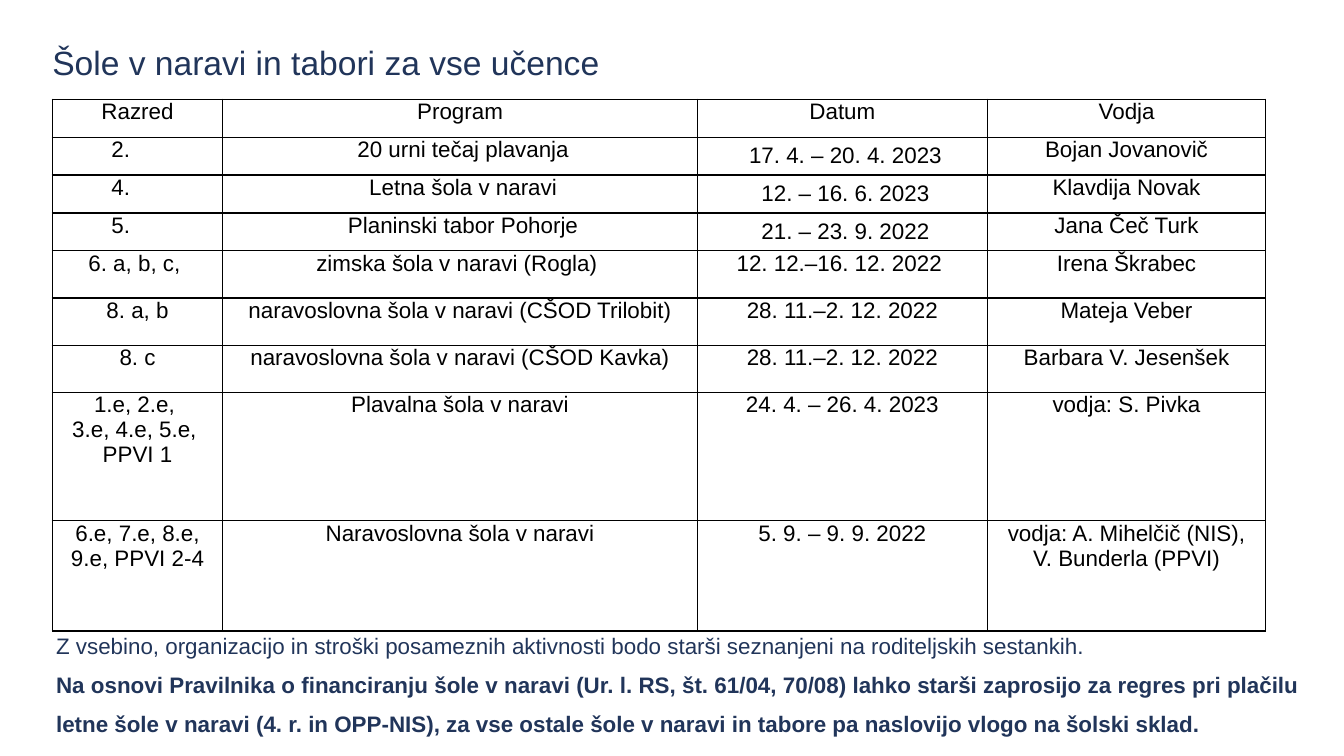
from dataclasses import dataclass
from lxml.etree import SubElement as Sub
from pptx import Presentation as Deck
from pptx.dml.color import RGBColor as Rgb
from pptx.enum.text import MSO_ANCHOR as Anchor, MSO_AUTO_SIZE as Fit, PP_ALIGN as Align
from pptx.oxml.ns import qn
from pptx.util import Pt


@dataclass(frozen=True)
class Theme:
    face: str = "Arial"
    navy: str = "21355A"
    black: str = "000000"
    head: float = 18
    text: float = 12
    rule: float = 0.75


theme = Theme()
TITLE = "Šole v naravi in tabori za vse učence"
NOTES = [
    "Z vsebino, organizacijo in stroški posameznih aktivnosti bodo starši "
    "seznanjeni na roditeljskih sestankih.",
    "Na osnovi Pravilnika o financiranju šole v naravi (Ur. l. RS, št. 61/04, 70/08) "
    "lahko starši zaprosijo za regres pri plačilu letne šole v naravi (4. r. in OPP-NIS), "
    "za vse ostale šole v naravi in tabore pa naslovijo vlogo na šolski sklad.",
]
COLS = [91.4, 254.2, 155.5, 149]
HIGH = [20.3] * 4 + [25.3] * 3 + [68.8, 59]
ROWS = [
    ("Razred", "Program", "Datum", "Vodja"),
    ("2.", " 20 urni tečaj plavanja", " 17. 4. – 20. 4. 2023", "Bojan Jovanovič"),
    ("4.", " Letna šola v naravi", " 12. – 16. 6. 2023", "Klavdija Novak"),
    ("5.", " Planinski tabor Pohorje", " 21. – 23. 9. 2022", "Jana Čeč Turk"),
    ("6. a, b, c, ", "zimska šola v naravi (Rogla) ", "12. 12.–16. 12. 2022 ", "Irena Škrabec"),
    ("8. a, b", "naravoslovna šola v naravi (CŠOD Trilobit)", "28. 11.–2. 12. 2022", "Mateja Veber"),
    ("8. c", "naravoslovna šola v naravi (CŠOD Kavka)", "28. 11.–2. 12. 2022", "Barbara V. Jesenšek"),
    ("1.e, 2.e, \n3.e, 4.e, 5.e, \nPPVI 1", "Plavalna šola v naravi", "24. 4. – 26. 4. 2023",
     "vodja: S. Pivka"),
    ("6.e, 7.e, 8.e, 9.e, PPVI 2-4", "Naravoslovna šola v naravi", "5. 9. – 9. 9. 2022",
     "vodja: A. Mihelčič (NIS),\nV. Bunderla (PPVI)"),
]
SINGLE = range(1, 4)


def apply(item, form):
    for key, value in form.items():
        setattr(item, key, value)


def style(frame, size, hue, form):
    for para in frame.paragraphs:
        apply(para, form)
        apply(para.font, {"name": theme.face, "size": Pt(size), "bold": False})
        para.font.color.rgb = Rgb.from_string(hue)


def edge(cell):
    props = cell._tc.get_or_add_tcPr()
    for spot, side in enumerate(("lnL", "lnR", "lnT", "lnB")):
        line = Sub(props, qn(f"a:{side}"), w=str(Pt(theme.rule)))
        fill = Sub(line, qn("a:solidFill"))
        Sub(fill, qn("a:srgbClr"), val=theme.black)
        props.insert(spot, line)


def title(slide, box):
    shape = slide.shapes.title
    apply(shape, dict(zip(("left", "top", "width", "height"), map(Pt, box))))
    frame = shape.text_frame
    frame.text = TITLE
    apply(frame, {"margin_left": 0, "margin_right": 0, "margin_top": 0, "margin_bottom": 0,
                  "vertical_anchor": Anchor.BOTTOM, "word_wrap": True, "auto_size": Fit.NONE})
    style(frame, theme.head, theme.navy, {"alignment": Align.LEFT})


def notes(slide, box):
    frame = slide.shapes.add_textbox(*map(Pt, box)).text_frame
    frame.text = "\n".join(NOTES)
    apply(frame, {"word_wrap": True, "auto_size": Fit.SHAPE_TO_FIT_TEXT})
    style(frame, theme.text, theme.navy, {"alignment": Align.JUSTIFY, "line_spacing": Pt(21)})
    frame.paragraphs[-1].font.bold = True


def grid(slide, left, top):
    box = map(Pt, (left, top, sum(COLS), sum(HIGH)))
    table = slide.shapes.add_table(len(ROWS), len(COLS), *box).table
    apply(table, {"first_row": False, "horz_banding": False})
    for col, width in zip(table.columns, COLS):
        col.width = Pt(width)
    for i, (row, high, words) in enumerate(zip(table.rows, HIGH, ROWS)):
        row.height = Pt(high)
        for j, (cell, text) in enumerate(zip(row.cells, words)):
            cell.text_frame.text = text
            shift = 18 if i in SINGLE and j == 0 else 0
            middle = i in SINGLE and j == 2
            apply(cell, {"margin_left": Pt(3.6), "margin_right": Pt(3.6 + shift),
                         "margin_top": 0, "margin_bottom": 0,
                         "vertical_anchor": Anchor.MIDDLE if middle else Anchor.TOP})
            style(cell.text_frame, theme.text, theme.black, {"alignment": Align.CENTER})
            cell.fill.background()
            edge(cell)


def main():
    deck = Deck()
    apply(deck, {"slide_width": Pt(720), "slide_height": Pt(405)})
    slide = deck.slides.add_slide(deck.slide_layouts[5])
    title(slide, (28, 10, 543.6, 34))
    notes(slide, (23, 328.3, 681, 70.6))
    grid(slide, 28, 53.2)
    deck.save("out.pptx")


if __name__ == "__main__":
    main()
